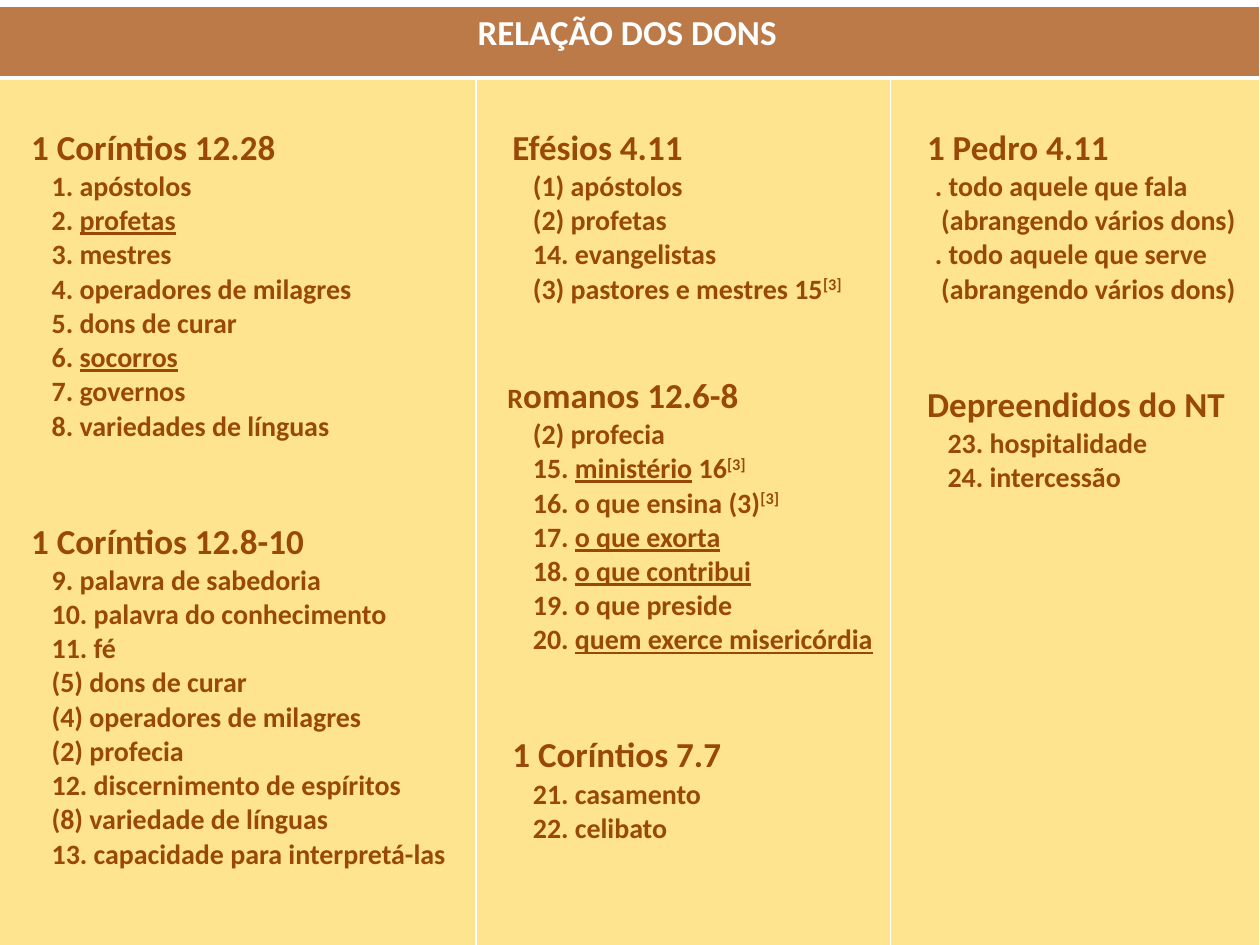
from lxml import etree
from pptx import Presentation
from pptx.dml.color import RGBColor
from pptx.enum.text import PP_ALIGN
from pptx.oxml.ns import qn
from pptx.util import Pt

CENTER = PP_ALIGN.CENTER
FONT = "Calibri"
COLORS = {"white": "FFFFFF", "header": "BC7A48", "body": "FFE48F", "text": "984807"}

# Content: _underlined_ words, ^ before a superscript note, > before a hanging item
TITLE = "RELAÇÃO DOS DONS"
COLUMNS = [
    [
        ("1 Coríntios 12.28", [
            "1. apóstolos", "2. _profetas_", "3. mestres", "4. operadores de milagres",
            "5. dons de curar", "6. _socorros_", "7. governos", "8. variedades de línguas"]),
        ("1 Coríntios 12.8-10", [
            "9. palavra de sabedoria", "10. palavra do conhecimento", "11. fé",
            "(5) dons de curar", "(4) operadores de milagres", "(2) profecia",
            "12. discernimento de espíritos", "(8) variedade de línguas",
            "13. capacidade para interpretá-las"]),
    ],
    [
        ("Efésios 4.11", [
            "(1) apóstolos", "(2) profetas", "14. evangelistas",
            "(3) pastores e mestres 15^[3]"]),
        ("Romanos 12.6-8", [
            "(2) profecia", "15. _ministério_ 16^[3]", "16. o que ensina (3)^[3]",
            "17. _o que exorta_", "18. _o que contribui_", "19. o que preside",
            "20. _quem exerce misericórdia_"]),
        ("1 Coríntios 7.7", ["21. casamento", "22. celibato"]),
    ],
    [
        ("1 Pedro 4.11", [
            ">. todo aquele que fala (abrangendo vários dons)",
            ">. todo aquele que serve (abrangendo vários dons)"]),
        ("Depreendidos do NT", ["23. hospitalidade", "24. intercessão"]),
    ],
]
SMALL_INITIAL = "Romanos 12.6-8"  # heading whose first letter has the item size

# Layout in points
LEFT, TOP = -3, 3.6
COLUMN_WIDTHS = [275, 237, 211]
ROW_HEIGHTS = [41, 509]
HEADING_SIZE, ITEM_SIZE = 20, 16
HEADING_INDENT, SMALL_INDENT, ITEM_INDENT = 13.6, 10.8, 25.3
HANGING_INDENT, HANGING_FIRST = 21.6, -3.5
SECTION_GAP, SMALL_GAP = 44, 39
BODY_TOP_MARGIN = 28


def rgb(name):
    return RGBColor.from_string(COLORS[name])


def style_cell(cell, fill, bottom_width=1):
    properties = cell._tc.get_or_add_tcPr()
    for side, width in (("L", 1), ("R", 1), ("T", 1), ("B", bottom_width)):
        line = etree.SubElement(properties, qn(f"a:ln{side}"), w=str(Pt(width)))
        solid = etree.SubElement(line, qn("a:solidFill"))
        etree.SubElement(solid, qn("a:srgbClr"), val=COLORS["white"])
    cell.fill.solid()
    cell.fill.fore_color.rgb = rgb(fill)


def add_run(paragraph, text, size, color="text", underline=False):
    run = paragraph.add_run()
    run.text = text
    font = run.font
    font.name, font.size, font.bold = FONT, Pt(size), True
    font.color.rgb = rgb(color)
    if underline:
        font.underline = True
    return run


def indent(paragraph, left, first=0):
    properties = paragraph._p.get_or_add_pPr()
    properties.set("marL", str(Pt(left)))
    properties.set("indent", str(Pt(first)))


def write_heading(paragraph, text, is_first):
    small = text == SMALL_INITIAL
    indent(paragraph, SMALL_INDENT if small else HEADING_INDENT)
    if not is_first:
        paragraph.space_before = Pt(SMALL_GAP if small else SECTION_GAP)
    if small:
        add_run(paragraph, text[0], ITEM_SIZE)
        text = text[1:]
    add_run(paragraph, text, HEADING_SIZE)


def write_item(paragraph, text):
    if text.startswith(">"):
        indent(paragraph, HANGING_INDENT, HANGING_FIRST)
    else:
        indent(paragraph, ITEM_INDENT)
    body, _, note = text.lstrip(">").partition("^")
    for index, part in enumerate(body.split("_")):
        if part:
            add_run(paragraph, part, ITEM_SIZE, underline=index % 2 == 1)
    if note:
        run = add_run(paragraph, note, ITEM_SIZE)
        run._r.get_or_add_rPr().set("baseline", "30000")


def write_column(cell, sections):
    cell.margin_top = Pt(BODY_TOP_MARGIN)
    frame = cell.text_frame
    for index, (heading, items) in enumerate(sections):
        paragraph = frame.add_paragraph() if index else frame.paragraphs[0]
        write_heading(paragraph, heading, index == 0)
        for item in items:
            write_item(frame.add_paragraph(), item)


def main():
    presentation = Presentation()
    presentation.slide_width, presentation.slide_height = Pt(720), Pt(540)
    slide = presentation.slides.add_slide(presentation.slide_layouts[6])

    # Table grid
    table = slide.shapes.add_table(
        2, len(COLUMNS), Pt(LEFT), Pt(TOP),
        Pt(sum(COLUMN_WIDTHS)), Pt(sum(ROW_HEIGHTS))).table
    for column, width in zip(table.columns, COLUMN_WIDTHS):
        column.width = Pt(width)
    for row, height in zip(table.rows, ROW_HEIGHTS):
        row.height = Pt(height)

    # Title row
    for cell in table.rows[0].cells:
        style_cell(cell, "header", bottom_width=3)
    title = table.cell(0, 0)
    title.merge(table.cell(0, len(COLUMNS) - 1))
    paragraph = title.text_frame.paragraphs[0]
    paragraph.alignment = CENTER
    add_run(paragraph, TITLE, HEADING_SIZE, "white")

    # Lists of gifts
    for cell, sections in zip(table.rows[1].cells, COLUMNS):
        style_cell(cell, "body")
        write_column(cell, sections)

    presentation.save("out.pptx")


if __name__ == "__main__":
    main()
